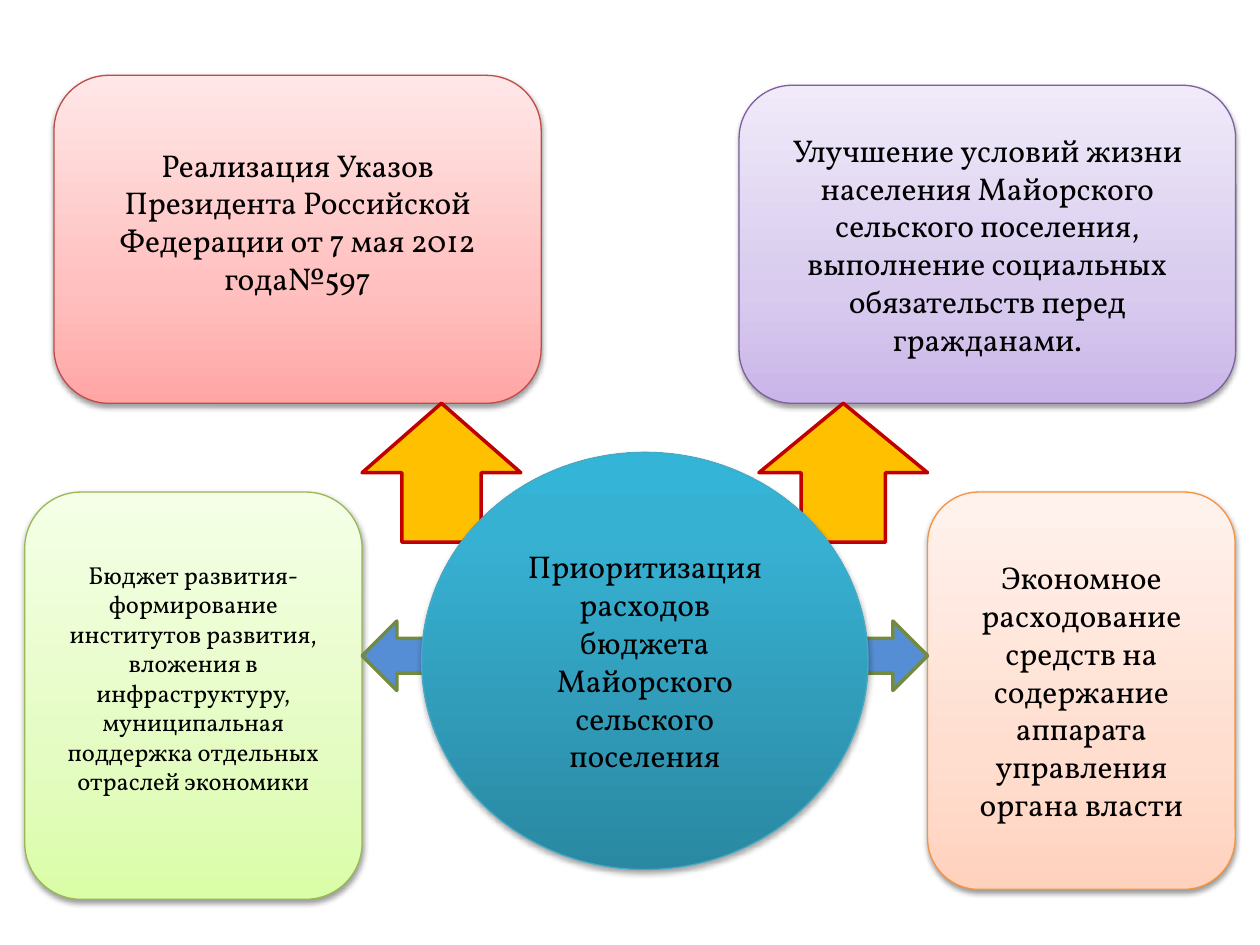
from copy import deepcopy

from lxml.etree import SubElement
from pptx import Presentation
from pptx.dml.color import RGBColor
from pptx.enum.shapes import MSO_SHAPE as SHAPE
from pptx.enum.text import MSO_ANCHOR as ANCHOR, PP_ALIGN as ALIGN
from pptx.oxml.ns import qn
from pptx.util import Cm, Pt

BLACK = RGBColor(0x00, 0x00, 0x00)
ROSE = [RGBColor(0xFF, 0xA6, 0xA5), RGBColor(0xFF, 0xC0, 0xBF), RGBColor(0xFF, 0xE7, 0xE7)]
LIME = [RGBColor(0xDA, 0xFD, 0xA7), RGBColor(0xE4, 0xFC, 0xC2), RGBColor(0xF5, 0xFF, 0xE7)]
PEACH = [RGBColor(0xFF, 0xD2, 0xBD), RGBColor(0xFF, 0xDE, 0xD0), RGBColor(0xFF, 0xF2, 0xED)]
LILAC = [RGBColor(0xC9, 0xB5, 0xE8), RGBColor(0xD8, 0xCB, 0xEE), RGBColor(0xF0, 0xEA, 0xF9)]
TEAL = [RGBColor(0x2A, 0x88, 0xA2), RGBColor(0x37, 0xB1, 0xD2), RGBColor(0x34, 0xB4, 0xD6)]
ROSE_LINE = RGBColor(0xBF, 0x4C, 0x48)
LIME_LINE = RGBColor(0x98, 0xB9, 0x55)
PEACH_LINE = RGBColor(0xF6, 0x92, 0x40)
LILAC_LINE = RGBColor(0x7D, 0x60, 0xA0)
TEAL_LINE = RGBColor(0x46, 0xAA, 0xC5)
BLUE = RGBColor(0x55, 0x8E, 0xD5)
OLIVE = RGBColor(0x73, 0x8A, 0x42)
GOLD = RGBColor(0xFF, 0xC0, 0x00)
RED = RGBColor(0xC0, 0x00, 0x00)


def write(tf, text, size=18, font="Vollkorn", color=BLACK, align=ALIGN.CENTER):
    for i, line in enumerate(text.split("\n")):
        p = tf.add_paragraph() if i else tf.paragraphs[0]
        p.alignment = align
        r = p.add_run()
        r.text = line
        r.font.size = Pt(size)
        r.font.name = font
        r.font.color.rgb = color


class Diagram:
    def __init__(self, slide):
        self.s = slide

    def shape(self, kind, box, line, width):
        sp = self.s.shapes.add_shape(kind, *map(Cm, box))
        sp.shadow.inherit = False
        sp.line.color.rgb = line
        sp.line.width = Pt(width)
        return sp

    def arrow(self, kind, box, fill, line):
        sp = self.shape(kind, box, line, 2)
        sp.fill.solid()
        sp.fill.fore_color.rgb = fill

    def panel(self, kind, box, text, colors, line, middle=0.35, size=18, bottom=0.13,
              opacity=38, distance=1.6):
        sp = self.shape(kind, box, line, 0.75)
        self.gradient(sp, colors, middle)
        self.shadow(sp, opacity, distance)
        tf = sp.text_frame
        tf.word_wrap = True
        tf.vertical_anchor = ANCHOR.MIDDLE
        tf.margin_bottom = Cm(bottom)
        write(tf, text, size=size)

    def gradient(self, sp, colors, middle):
        sp.fill.gradient()
        sp.fill.gradient_angle = 90
        stops = sp._element.spPr.find(qn("a:gradFill")).find(qn("a:gsLst"))
        stops.append(deepcopy(stops[0]))
        for stop, color, position in zip(sp.fill.gradient_stops, colors, (0, middle, 1)):
            stop.color.rgb = color
            stop.position = position

    def shadow(self, sp, opacity, distance):
        effects = sp._element.spPr.find(qn("a:effectLst"))
        outer = SubElement(effects, qn("a:outerShdw"), blurRad=str(Pt(3.1)),
                           dist=str(Pt(distance)), dir="5400000", rotWithShape="0")
        color = SubElement(outer, qn("a:srgbClr"), val=str(BLACK))
        SubElement(color, qn("a:alpha"), val=str(opacity * 1000))


def main():
    prs = Presentation()
    prs.slide_width, prs.slide_height = Cm(25.4), Cm(19.05)
    d = Diagram(prs.slides.add_slide(prs.slide_layouts[6]))

    d.panel(SHAPE.ROUNDED_RECTANGLE, (1.09, 1.52, 9.82, 6.61),
            "Реализация Указов Президента Российской Федерации от 7 мая 2012 года№597",
            ROSE, ROSE_LINE, bottom=0.85)
    d.panel(SHAPE.ROUNDED_RECTANGLE, (0.5, 9.92, 6.8, 8.21),
            "Бюджет развития-формирование институтов развития, вложения в инфраструктуру, "
            "муниципальная поддержка отдельных отраслей экономики",
            LIME, LIME_LINE, size=14, bottom=0.85)
    d.panel(SHAPE.ROUNDED_RECTANGLE, (18.7, 9.92, 6.2, 8.01),
            "Экономное расходование средств на содержание аппарата управления органа власти",
            PEACH, PEACH_LINE)
    d.panel(SHAPE.ROUNDED_RECTANGLE, (14.9, 1.72, 10.01, 6.41),
            "Улучшение условий жизни населения Майорского сельского поселения, "
            "выполнение социальных обязательств перед гражданами.",
            LILAC, LILAC_LINE)

    d.arrow(SHAPE.LEFT_ARROW, (7.3, 12.52, 1.4, 1.4), BLUE, OLIVE)
    d.arrow(SHAPE.RIGHT_ARROW, (17.3, 12.52, 1.4, 1.4), BLUE, OLIVE)
    d.arrow(SHAPE.UP_ARROW, (7.3, 8.13, 3.2, 2.8), GOLD, RED)
    d.arrow(SHAPE.UP_ARROW, (15.3, 8.13, 3.4, 2.8), GOLD, RED)

    d.panel(SHAPE.OVAL, (8.5, 9.12, 9, 8.41),
            "Приоритизация\nрасходов\nбюджета\nМайорского сельского поселения",
            TEAL, TEAL_LINE, middle=0.8, opacity=35, distance=1.8)

    prs.save("out.pptx")


if __name__ == "__main__":
    main()
